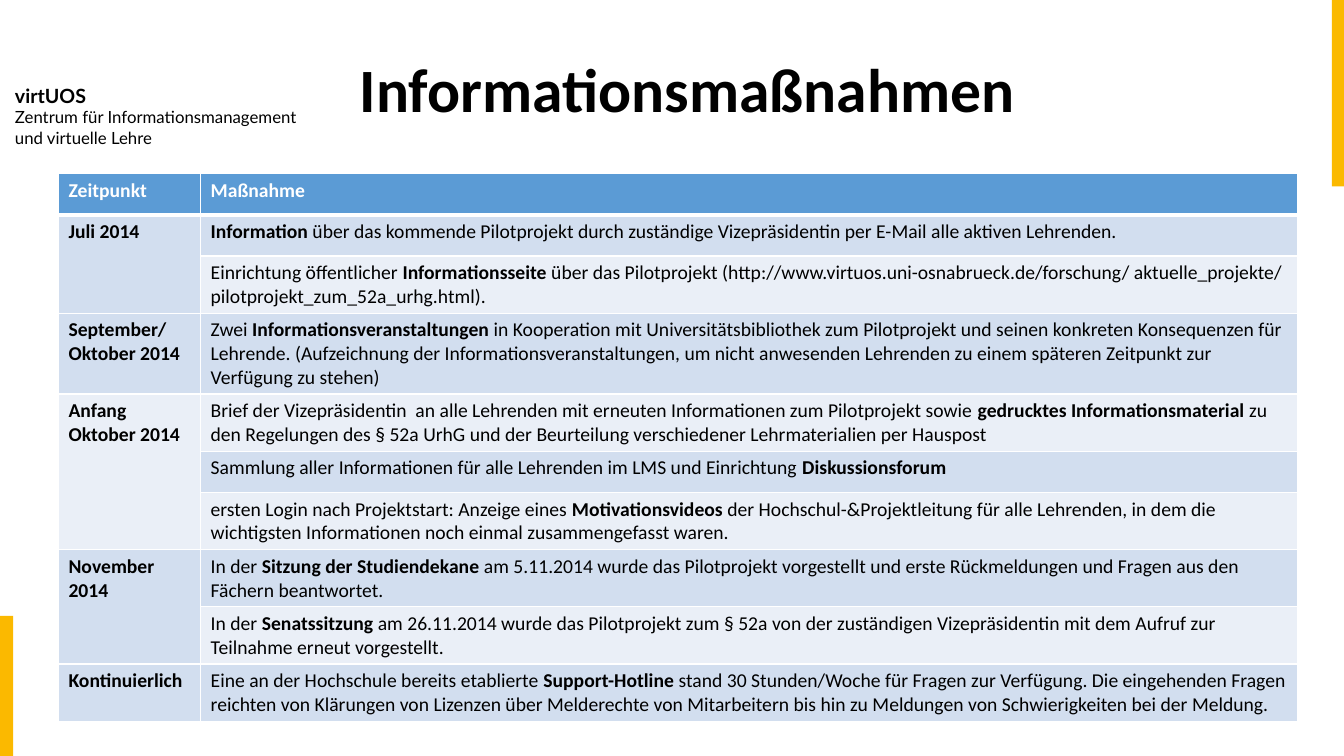
from dataclasses import dataclass
from typing import Any

from lxml.etree import SubElement
from pptx import Presentation
from pptx.dml.color import RGBColor
from pptx.enum.shapes import MSO_SHAPE
from pptx.enum.text import MSO_ANCHOR, MSO_AUTO_SIZE
from pptx.oxml.ns import qn
from pptx.util import Inches, Pt

BLACK, WHITE, YELLOW = "000000", "FFFFFF", "FBB900"
HEADER_BLUE, BANDS = "5B9BD5", ("D2DEEF", "EAEFF7")
ROW_HEIGHT = 0.41
COLUMN_WIDTHS = (1.41, 10.88)
HEADINGS = ("Zeitpunkt", "Maßnahme")

TITLE_FONT = {"name": "Calibri", "size": Pt(44), "bold": True}
TABLE_FONT = {"name": "Calibri", "size": Pt(14)}
UNIT_FONT = {"name": "Lato", "size": Pt(14), "bold": True}
UNIT_DETAIL_FONT = {"name": "Lato", "size": Pt(12), "bold": False}


@dataclass
class Bar:
    left: float
    top: float
    height: float


@dataclass
class Phase:
    """A point in time and its measures; ** encloses bold words."""
    time: str
    measures: list[str]


BARS = [Bar(13.21, -0.01, 1.86), Bar(-0.01, 6.11, 1.39)]
PHASES = [
    Phase("Juli 2014", [
        "**Information** über das kommende Pilotprojekt durch zuständige Vizepräsidentin "
        "per E-Mail alle aktiven Lehrenden.",
        "Einrichtung öffentlicher **Informationsseite** über das Pilotprojekt "
        "(http://www.virtuos.uni-osnabrueck.de/forschung/ aktuelle_projekte/ "
        "pilotprojekt_zum_52a_urhg.html).",
    ]),
    Phase("September/\nOktober 2014", [
        "Zwei **Informationsveranstaltungen** in Kooperation mit Universitätsbibliothek zum "
        "Pilotprojekt und seinen konkreten Konsequenzen für Lehrende. (Aufzeichnung der "
        "Informationsveranstaltungen, um nicht anwesenden Lehrenden zu einem späteren "
        "Zeitpunkt zur Verfügung zu stehen)",
    ]),
    Phase("Anfang\nOktober 2014", [
        "Brief der Vizepräsidentin  an alle Lehrenden mit erneuten Informationen zum "
        "Pilotprojekt sowie **gedrucktes Informationsmaterial **zu den Regelungen des "
        "§ 52a UrhG und der Beurteilung verschiedener Lehrmaterialien per Hauspost",
        "Sammlung aller Informationen für alle Lehrenden im LMS und Einrichtung "
        "**Diskussionsforum**",
        "ersten Login nach Projektstart: Anzeige eines **Motivationsvideos** der "
        "Hochschul-&Projektleitung für alle Lehrenden, in dem die wichtigsten "
        "Informationen noch einmal zusammengefasst waren.",
    ]),
    Phase("November 2014", [
        "In der **Sitzung der Studiendekane **am 5.11.2014 wurde das Pilotprojekt "
        "vorgestellt und erste Rückmeldungen und Fragen aus den Fächern beantwortet.",
        "In der **Senatssitzung** am 26.11.2014 wurde das Pilotprojekt zum § 52a von der "
        "zuständigen Vizepräsidentin mit dem Aufruf zur Teilnahme erneut vorgestellt.",
    ]),
    Phase("Kontinuierlich", [
        "Eine an der Hochschule bereits etablierte **Support-Hotline** stand 30 "
        "Stunden/Woche für Fragen zur Verfügung. Die eingehenden Fragen reichten von "
        "Klärungen von Lizenzen über Melderechte von Mitarbeitern bis hin zu Meldungen "
        "von Schwierigkeiten bei der Meldung.",
    ]),
]


def paint(fill: Any, color: str) -> None:
    fill.solid()
    fill.fore_color.rgb = RGBColor.from_string(color)


def add_run(paragraph: Any, text: str, font_format: dict[str, Any], color: str = BLACK) -> None:
    run = paragraph.add_run()
    run.text = text
    for attribute, value in font_format.items():
        setattr(run.font, attribute, value)
    paint(run.font.fill, color)


def add_text_frame(slide: Any, left: float, top: float, width: float, height: float) -> Any:
    frame = slide.shapes.add_textbox(*map(Inches, (left, top, width, height))).text_frame
    frame.word_wrap = True
    return frame


def add_bar(slide: Any, bar: Bar) -> None:
    box = map(Inches, (bar.left, bar.top, 0.14, bar.height))
    rectangle = slide.shapes.add_shape(MSO_SHAPE.RECTANGLE, *box)
    rectangle.shadow.inherit = False
    paint(rectangle.fill, YELLOW)
    rectangle.line.fill.background()


def add_unit_name(slide: Any) -> None:
    frame = add_text_frame(slide, 0.05, 0.78, 3.42, 0.74)
    frame.auto_size = MSO_AUTO_SIZE.SHAPE_TO_FIT_TEXT
    paragraph = frame.paragraphs[0]
    add_run(paragraph, "virtUOS", UNIT_FONT)
    for detail in ("Zentrum für Informationsmanagement", "und virtuelle Lehre"):
        paragraph.add_line_break()
        add_run(paragraph, detail, UNIT_DETAIL_FONT)


def add_title(slide: Any) -> None:
    frame = add_text_frame(slide, 3.47, 0.19, 9.4, 1.45)
    frame.vertical_anchor = MSO_ANCHOR.MIDDLE
    frame.paragraphs[0].line_spacing = 0.9
    add_run(frame.paragraphs[0], "Informationsmaßnahmen", TITLE_FONT)


def set_borders(cell: Any, row: int) -> None:
    """White grid with a heavier rule between the header and the body."""
    properties = cell._tc.get_or_add_tcPr()
    widths = {"L": 1, "R": 1, "T": 3 if row == 1 else 1, "B": 3 if row == 0 else 1}
    for side, width in widths.items():
        border = SubElement(properties, qn(f"a:ln{side}"), w=str(Pt(width)))
        SubElement(SubElement(border, qn("a:solidFill")), qn("a:srgbClr"), val=WHITE)


def fill_cell(cell: Any, text: str, color: str = BLACK) -> None:
    frame = cell.text_frame
    for index, line in enumerate(text.split("\n")):
        paragraph = frame.add_paragraph() if index else frame.paragraphs[0]
        for part, words in enumerate(line.split("**")):
            if words:
                add_run(paragraph, words, TABLE_FONT | {"bold": part % 2 == 1}, color)


def add_schedule(slide: Any) -> None:
    row_count = 1 + sum(len(phase.measures) for phase in PHASES)
    box = map(Inches, (0.58, 1.72, sum(COLUMN_WIDTHS), ROW_HEIGHT * row_count))
    schedule = slide.shapes.add_table(row_count, len(COLUMN_WIDTHS), *box).table
    schedule.horz_banding = False
    for column, width in zip(schedule.columns, COLUMN_WIDTHS):
        column.width = Inches(width)

    for row in range(row_count):
        for column in range(len(COLUMN_WIDTHS)):
            cell = schedule.cell(row, column)
            set_borders(cell, row)
            paint(cell.fill, BANDS[(row - 1) % 2] if row else HEADER_BLUE)

    for column, heading in enumerate(HEADINGS):
        fill_cell(schedule.cell(0, column), f"**{heading}**", WHITE)
    row = 1
    for phase in PHASES:
        last_row = row + len(phase.measures) - 1
        time_cell = schedule.cell(row, 0)
        if last_row > row:
            time_cell.merge(schedule.cell(last_row, 0))
        fill_cell(time_cell, "\n".join(f"**{line}**" for line in phase.time.split("\n")))
        for offset, measure in enumerate(phase.measures):
            fill_cell(schedule.cell(row + offset, 1), measure)
        row = last_row + 1


def main() -> None:
    presentation = Presentation()
    presentation.slide_width = Inches(13.33)
    presentation.slide_height = Inches(7.5)
    slide = presentation.slides.add_slide(presentation.slide_layouts[6])
    paint(slide.background.fill, WHITE)
    for bar in BARS:
        add_bar(slide, bar)
    add_unit_name(slide)
    add_title(slide)
    add_schedule(slide)
    presentation.save("out.pptx")


if __name__ == "__main__":
    main()
